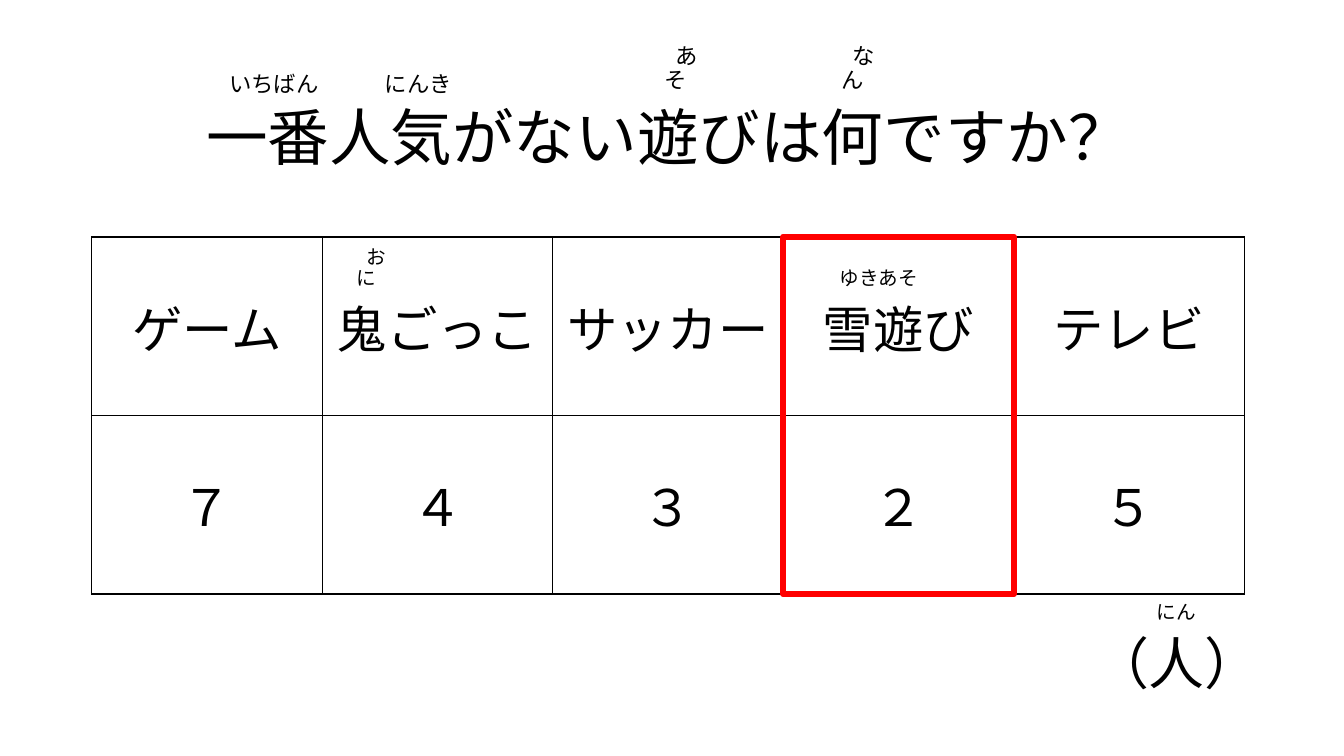
from lxml.etree import SubElement
from pptx import Presentation
from pptx.dml.color import RGBColor
from pptx.enum.shapes import MSO_SHAPE as Shape
from pptx.enum.text import MSO_ANCHOR as Anchor, PP_ALIGN as Align
from pptx.oxml.ns import qn
from pptx.util import Cm, Pt

TITLE = "一番人気がない遊びは何ですか？"
UNIT = "（人）"
VOTES = [("ゲーム", "７"), ("鬼ごっこ", "４"), ("サッカー", "３"),
         ("雪遊び", "２"), ("テレビ", "５")]
LEAST_POPULAR = 3
READINGS = [
    ("いちばん", 5.2, 1.63, 3.4, 0.94, 16),
    ("にんき", 8.84, 1.63, 3.4, 0.94, 16),
    ("　あそ", 16, 1.55, 2.06, 0.94, 16),
    ("　なん", 20.45, 1.55, 2.06, 0.94, 16),
    ("　おに", 8.31, 6.48, 1.85, 0.94, 14),
    ("　ゆきあそ", 20.29, 6.48, 3.23, 0.94, 14),
    ("にん", 27.89, 14.1, 3.51, 1.75, 14),
]
COLORS = {"text": "000000", "border": "000000", "highlight": "FF0000"}
FONT = "Noto Sans CJK JP"
TABLE_LEFT, TABLE_TOP, COL_W, ROW_H = 2.31, 5.97, 5.81, 4.5


def write(tf, text, size, spacing=None):
    p = tf.paragraphs[0]
    p.alignment = Align.CENTER
    if spacing:
        p.line_spacing = spacing
    r = p.add_run()
    r.text = text
    r.font.size = Pt(size)
    r.font.name = FONT
    r.font.color.rgb = RGBColor.from_string(COLORS["text"])
    SubElement(r.font._element, qn("a:ea"), typeface=FONT)


def add_text(s, text, left, top, width, height, size, anchor=Anchor.BOTTOM):
    tf = s.shapes.add_textbox(Cm(left), Cm(top), Cm(width), Cm(height)).text_frame
    tf.word_wrap = True
    tf.vertical_anchor = anchor
    write(tf, text, size, spacing=0.9)


def add_borders(cell):
    tc_pr = cell._tc.get_or_add_tcPr()
    for i, side in enumerate(("lnL", "lnR", "lnT", "lnB")):
        ln = tc_pr.makeelement(qn(f"a:{side}"), {"w": str(Pt(1))})
        fill = SubElement(ln, qn("a:solidFill"))
        SubElement(fill, qn("a:srgbClr"), val=COLORS["border"])
        tc_pr.insert(i, ln)


def add_vote_table(s):
    rows = list(zip(*VOTES))
    frame = s.shapes.add_table(len(rows), len(VOTES), Cm(TABLE_LEFT), Cm(TABLE_TOP),
                               Cm(COL_W * len(VOTES)), Cm(ROW_H * len(rows)))
    table = frame.table
    table.first_row = table.horz_banding = False
    for row, texts in zip(table.rows, rows):
        row.height = Cm(ROW_H)
        for cell, text in zip(row.cells, texts):
            cell.vertical_anchor = Anchor.MIDDLE
            cell.fill.background()
            add_borders(cell)
            write(cell.text_frame, text, 36)


def add_highlight(s):
    sp = s.shapes.add_shape(Shape.RECTANGLE, Cm(TABLE_LEFT + COL_W * LEAST_POPULAR),
                            Cm(TABLE_TOP), Cm(COL_W), Cm(ROW_H * 2))
    sp.shadow.inherit = False
    sp.fill.background()
    sp.line.color.rgb = RGBColor.from_string(COLORS["highlight"])
    sp.line.width = Pt(4.5)


def main():
    prs = Presentation()
    prs.slide_width, prs.slide_height = Cm(33.87), Cm(19.05)
    s = prs.slides.add_slide(prs.slide_layouts[6])
    add_text(s, TITLE, 2.24, 1.7, 29.21, 3.68, 44, Anchor.MIDDLE)
    add_vote_table(s)
    add_highlight(s)
    add_text(s, UNIT, 27.03, 14.96, 5.26, 3.68, 40, Anchor.MIDDLE)
    for reading in READINGS:
        add_text(s, *reading)
    prs.save("out.pptx")


if __name__ == "__main__":
    main()
